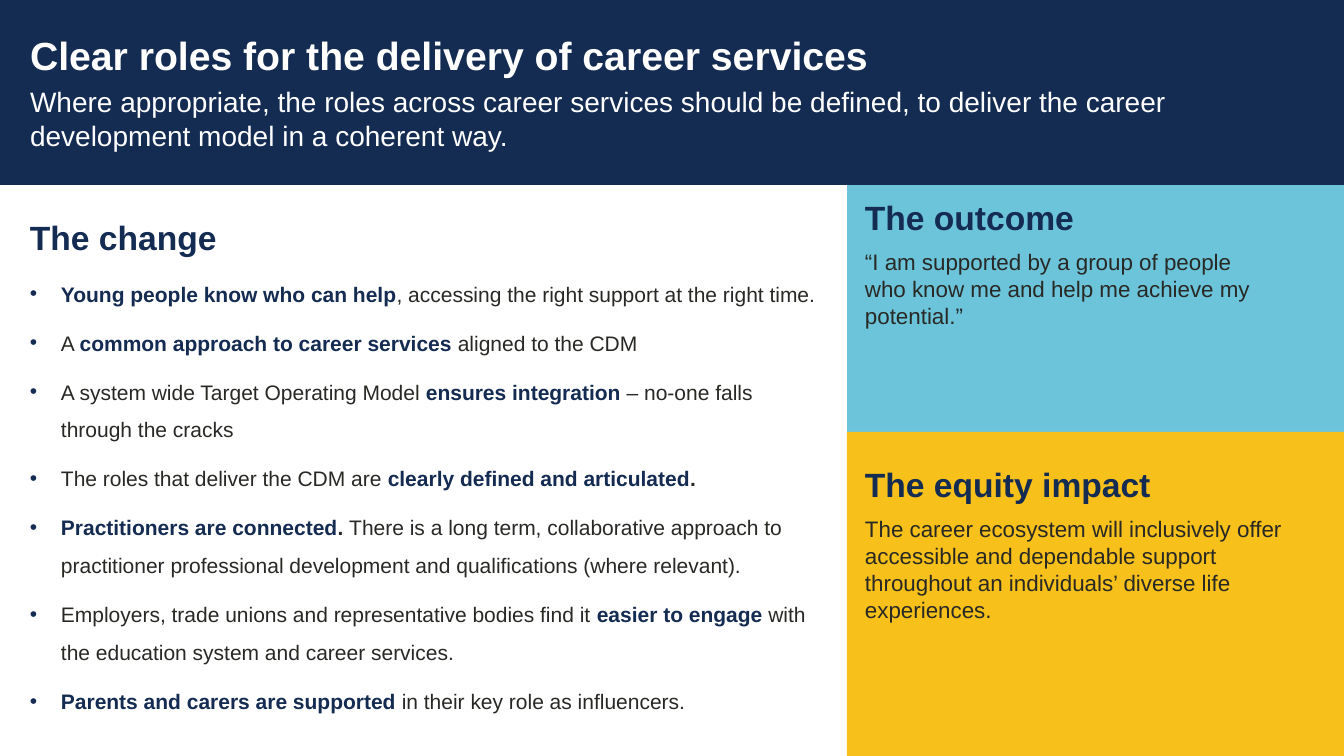
from pptx import Presentation
from pptx.dml.color import RGBColor
from pptx.enum.shapes import MSO_SHAPE
from pptx.util import Emu, Pt
from lxml.etree import SubElement
from pptx.oxml.ns import qn

NAVY, DARK, WHITE = "142B52", "282825", "FFFFFF"
SKY, GOLD = "6CC4DA", "F7C01B"

# Content
TITLE = "Clear roles for the delivery of career services"
SUBTITLE = ("Where appropriate, the roles across career services should be defined, "
            "to deliver the career development model in a coherent way.")
# Each bullet is a list of (style, text) runs
STYLES = {"key": (NAVY, True), "plain": (DARK, False), "strong": (DARK, True)}
CHANGES = [
    [("key", "Young people know who can help"),
     ("plain", ", accessing the right support at the right time.")],
    [("plain", "A "), ("key", "common approach to career services "),
     ("plain", "aligned to the CDM")],
    [("plain", "A system wide Target Operating Model "),
     ("key", "ensures integration "),
     ("plain", "– no-one falls through the cracks")],
    [("plain", "The roles that deliver the CDM are "),
     ("key", "clearly defined and articulated"), ("strong", ".")],
    [("key", "Practitioners are connected"), ("strong", ". "),
     ("plain", "There is a long term, collaborative approach to practitioner "
               "professional development and qualifications (where relevant).")],
    [("plain", "Employers, trade unions and representative bodies find it "),
     ("key", "easier to engage "),
     ("plain", "with the education system and career services.")],
    [("key", "Parents and carers are supported "),
     ("plain", "in their key role as influencers.")],
]
# Heading, body, top and width of each side text
SIDE_TEXTS = [
    ("The outcome",
     "“I am supported by a group of people who know me and help me achieve "
     "my potential.”", 197, 409),
    ("The equity impact",
     "The career ecosystem will inclusively offer accessible and dependable "
     "support throughout an individuals’ diverse life experiences.", 464, 449),
]

# Layout in px
W, H = 1344, 756
SPLIT, BODY_TOP, SIDE_MID, HEADER_H = 847, 172, 432, 185
MARGIN, SIDE_X, INDENT = 30, 865, 31
PANELS = [
    (SKY, SPLIT, BODY_TOP, W - SPLIT, SIDE_MID - BODY_TOP),
    (WHITE, 0, BODY_TOP, SPLIT, H - BODY_TOP),
    (GOLD, SPLIT, SIDE_MID, W - SPLIT, H - SIDE_MID),
    (NAVY, 0, 0, W, HEADER_H),
]


def px(n):
    return Emu(round(n * 914400 / 100.8))


def rgb(color):
    return RGBColor.from_string(color)


def add_panel(color, *box):
    sp = s.shapes.add_shape(MSO_SHAPE.RECTANGLE, *map(px, box))
    sp.shadow.inherit = False
    sp.fill.solid()
    sp.fill.fore_color.rgb = rgb(color)
    sp.line.fill.background()


def add_box(*box):
    tf = s.shapes.add_textbox(*map(px, box)).text_frame
    tf.word_wrap = True
    tf.margin_left = tf.margin_top = tf.margin_right = tf.margin_bottom = 0
    return tf


def add_para(tf, first=False, spacing=None, after=8):
    p = tf.paragraphs[0] if first else tf.add_paragraph()
    p.space_after = Pt(after)
    if spacing:
        p.line_spacing = spacing
    return p


def add_run(p, text, size, color=DARK, bold=False):
    r = p.add_run()
    r.text = text
    r.font.name = "Arial"
    r.font.size = Pt(size)
    r.font.bold = bold
    r.font.color.rgb = rgb(color)


def add_bullet(p):
    pPr = p._p.get_or_add_pPr()
    pPr.set("marL", str(px(INDENT)))
    pPr.set("indent", str(-px(INDENT)))
    clr = SubElement(pPr, qn("a:buClr"))
    SubElement(clr, qn("a:srgbClr")).set("val", NAVY)
    SubElement(pPr, qn("a:buFont")).set("typeface", "Arial")
    SubElement(pPr, qn("a:buChar")).set("char", "•")


prs = Presentation()
prs.slide_width, prs.slide_height = px(W), px(H)
s = prs.slides.add_slide(prs.slide_layouts[6])

# Colour panels
for panel in PANELS:
    add_panel(*panel)

# Header
tf = add_box(MARGIN, 31, 1284, 66)
add_run(add_para(tf, first=True, after=0), TITLE, 28, WHITE, True)
tf = add_box(MARGIN, 85, 1274, 85)
add_run(add_para(tf, first=True), SUBTITLE, 20, WHITE)

# The change
tf = add_box(MARGIN, 197, 786, 414)
add_run(add_para(tf, first=True, spacing=1.5), "The change", 24, NAVY, True)
for runs in CHANGES:
    p = add_para(tf, spacing=1.5)
    add_bullet(p)
    for style, text in runs:
        add_run(p, text, 15, *STYLES[style])

# Outcome and equity impact
for heading, body, top, width in SIDE_TEXTS:
    tf = add_box(SIDE_X, top, width, 154)
    add_run(add_para(tf, first=True), heading, 24, NAVY, True)
    add_run(add_para(tf), body, 16)

prs.save("out.pptx")
